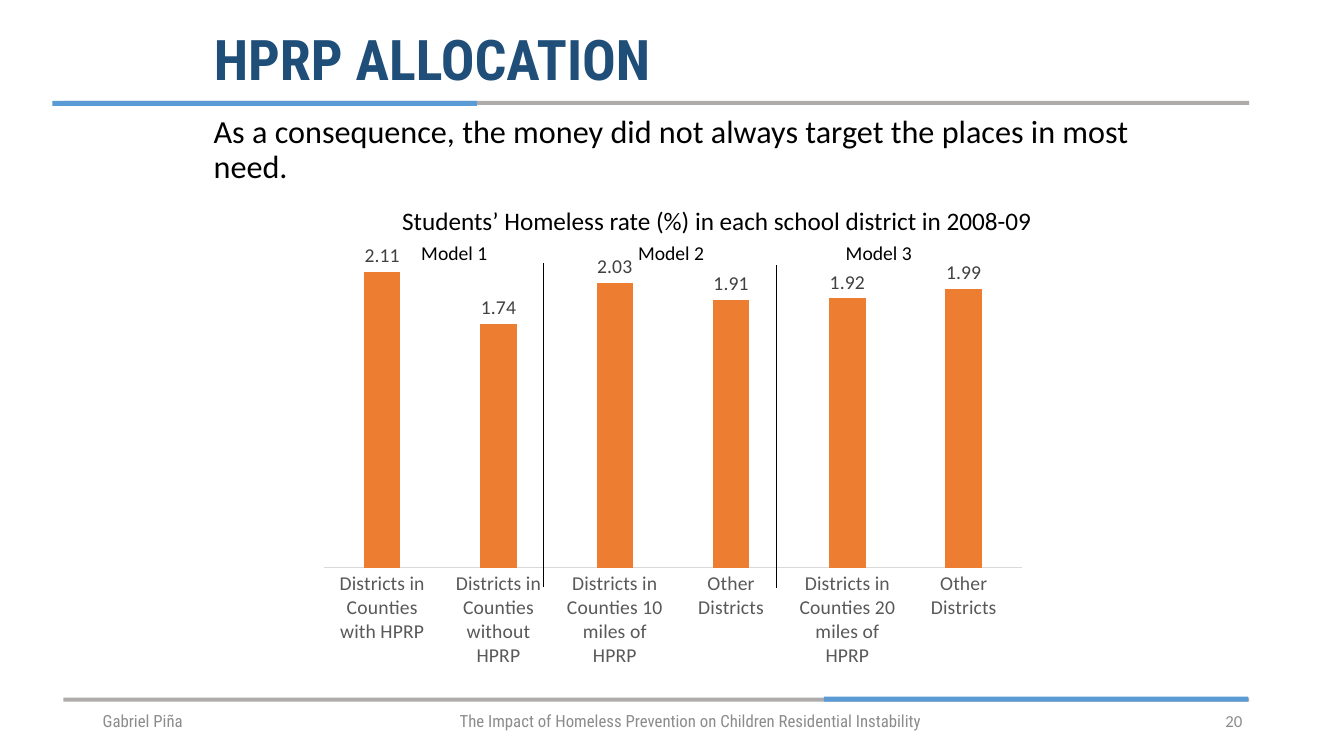
from lxml.etree import SubElement
from pptx import Presentation
from pptx.chart.data import CategoryChartData
from pptx.dml.color import RGBColor
from pptx.enum.chart import XL_CHART_TYPE, XL_LABEL_POSITION, XL_TICK_LABEL_POSITION, XL_TICK_MARK
from pptx.enum.shapes import MSO_CONNECTOR, MSO_SHAPE
from pptx.enum.text import MSO_ANCHOR, PP_ALIGN
from pptx.oxml import parse_xml
from pptx.oxml.ns import nsdecls, qn
from pptx.util import Inches, Pt

HEADING, BODY = "Roboto Condensed", "Calibri"
BLACK, GRAY, BLUE, FOOTER = "000000", "AFABAB", "5B9BD5", "8C8C8C"
RATES = [
    ("Districts in Counties with HPRP", 2.11),
    ("Districts in Counties without HPRP", 1.74),
    ("Districts in Counties 10 miles of HPRP", 2.03),
    ("Other Districts", 1.91),
    ("Districts in Counties 20 miles of HPRP", 1.92),
    ("Other Districts", 1.99),
]


def rgb(color):
    """Turn a hex string into a colour."""
    return RGBColor.from_string(color)


def style_font(font, size, color, name=BODY, bold=False):
    """Set the look of a font."""
    font.size, font.name, font.bold = Pt(size), name, bold
    font.color.rgb = rgb(color)


def fill_text(sp, text, size, color, name=BODY, bold=False, align=PP_ALIGN.LEFT,
              anchor=MSO_ANCHOR.TOP, wrap=True, spacing=1.0, before=0):
    """Write one formatted paragraph into a shape."""
    tf = sp.text_frame
    tf.text = text
    tf.word_wrap, tf.vertical_anchor = wrap, anchor
    p = tf.paragraphs[0]
    p.alignment, p.line_spacing, p.space_before = align, spacing, Pt(before)
    style_font(p.runs[0].font, size, color, name, bold)


def add_text(s, box, text, size, color, **options):
    """Add a text box at the given place."""
    sp = s.shapes.add_textbox(*map(Inches, box))
    fill_text(sp, text, size, color, **options)


def add_bar(s, box, color):
    """Add a flat rule without outline."""
    sp = s.shapes.add_shape(MSO_SHAPE.RECTANGLE, *map(Inches, box))
    sp.shadow.inherit = False
    sp.fill.solid()
    sp.fill.fore_color.rgb = rgb(color)
    sp.line.fill.background()


def add_divider(s, x, top, bottom):
    """Add a thin vertical line between models."""
    line = s.shapes.add_connector(MSO_CONNECTOR.STRAIGHT, Inches(x), Inches(top),
                                  Inches(x), Inches(bottom))
    line.line.color.rgb = rgb(BLACK)
    line.line.width = Pt(0.5)
    SubElement(line._element.spPr, qn("a:effectLst"))


def set_plot_layout(chart, x, y, w, h):
    """Fix the inner plot area as fractions of the chart."""
    plot_area = chart._chartSpace.chart.plotArea
    for layout in plot_area.findall(qn("c:layout")):
        plot_area.remove(layout)
    plot_area.insert(0, parse_xml(
        f'<c:layout {nsdecls("c")}><c:manualLayout><c:layoutTarget val="inner"/>'
        '<c:xMode val="edge"/><c:yMode val="edge"/>'
        f'<c:x val="{x}"/><c:y val="{y}"/><c:w val="{w}"/><c:h val="{h}"/>'
        '</c:manualLayout></c:layout>'))


def add_rate_chart(s, box):
    """Add the column chart of homeless rates."""
    data = CategoryChartData(number_format="0.00")
    data.categories = [name for name, _ in RATES]
    data.add_series("Series 1", [rate for _, rate in RATES])
    chart = s.shapes.add_chart(XL_CHART_TYPE.COLUMN_CLUSTERED, *map(Inches, box), data).chart
    chart.has_legend = chart.has_title = False
    style_font(chart.font, 14, BLACK)
    set_plot_layout(chart, 0.02, 0.02, 0.96, 0.74)

    values = chart.value_axis
    values.minimum_scale, values.maximum_scale = 0, 2.5
    values.has_major_gridlines = values.visible = False
    cats = chart.category_axis
    cats.major_tick_mark = XL_TICK_MARK.NONE
    cats.tick_label_position = XL_TICK_LABEL_POSITION.NEXT_TO_AXIS
    cats.format.line.color.rgb = rgb("D9D9D9")
    cats.format.line.width = Pt(0.75)
    style_font(cats.tick_labels.font, 14, "595959")

    plot = chart.plots[0]
    plot.gap_width, plot.overlap, plot.vary_by_categories = 219, -27, False
    fill = plot.series[0].format.fill
    fill.solid()
    fill.fore_color.rgb = rgb("ED7D31")
    labels = plot.series[0].data_labels
    labels.show_value = True
    labels.number_format, labels.number_format_is_linked = "0.00", False
    labels.position = XL_LABEL_POSITION.OUTSIDE_END
    style_font(labels.font, 14, "404040")


def main():
    """Build the slide and save it."""
    prs = Presentation()
    prs.slide_width, prs.slide_height = Inches(13.33), Inches(7.5)
    s = prs.slides.add_slide(prs.slide_layouts[5])

    add_bar(s, (0.63, 1, 11.76, 0.04), GRAY)
    add_bar(s, (0.52, 1, 4.21, 0.05), BLUE)
    add_bar(s, (0.63, 6.92, 11.76, 0.04), GRAY)
    add_bar(s, (8.17, 6.91, 4.21, 0.05), BLUE)

    title = s.shapes.title
    title.left, title.top, title.width, title.height = map(Inches, (2.02, 0.24, 9.31, 0.76))
    fill_text(title, "HPRP ALLOCATION", 40, "1F4E79", name=HEADING, bold=True,
              anchor=MSO_ANCHOR.MIDDLE, spacing=0.9)
    add_text(s, (2.02, 1.1, 9.31, 0.85),
             "As a consequence, the money did not always target the places in most need.",
             23, BLACK, spacing=0.9, before=7.5)

    add_rate_chart(s, (3.07, 2.06, 7.21, 4.7))
    add_text(s, (3.89, 1.99, 6.46, 0.4),
             "Students’ Homeless rate (%) in each school district in 2008-09",
             18, BLACK, wrap=False)
    add_divider(s, 5.39, 2.61, 5.82)
    add_divider(s, 7.7, 2.63, 5.83)
    for number, x in enumerate((4.08, 6.23, 8.29), start=1):
        add_text(s, (x, 2.34, 0.86, 0.34), f"Model {number}", 14, BLACK, wrap=False)

    for x, w, text, name, align in (
        (0.92, 3, "Gabriel Piña", HEADING, PP_ALIGN.LEFT),
        (4.46, 5.19, "The Impact of Homeless Prevention on Children Residential Instability",
         HEADING, PP_ALIGN.LEFT),
        (9.42, 3, "20", BODY, PP_ALIGN.RIGHT),
    ):
        add_text(s, (x, 6.95, w, 0.4), text, 12, FOOTER, name=name, align=align,
                 anchor=MSO_ANCHOR.MIDDLE)
    prs.save("out.pptx")


if __name__ == "__main__":
    main()
